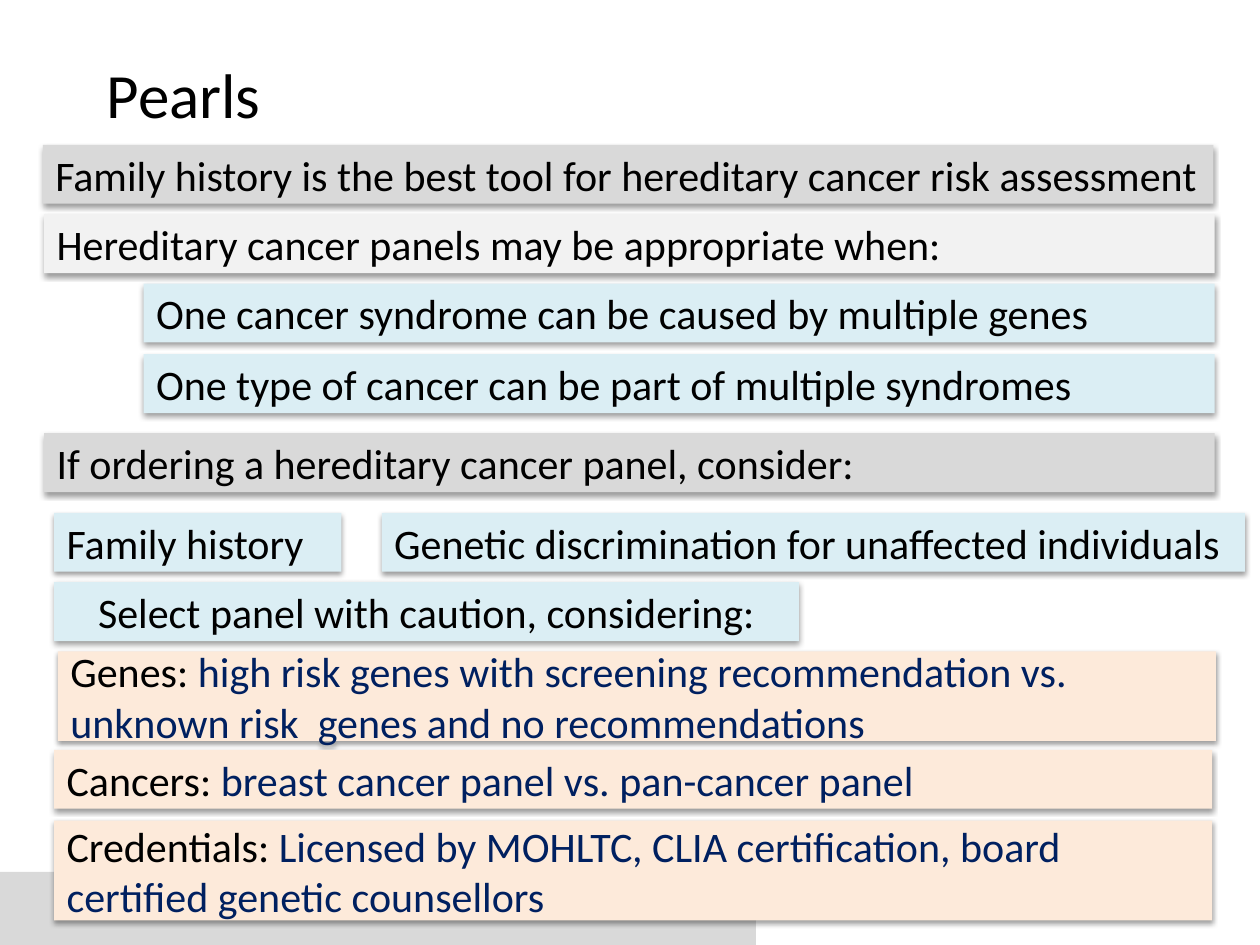
from lxml.etree import SubElement
from pptx import Presentation
from pptx.dml.color import RGBColor
from pptx.enum.shapes import MSO_SHAPE
from pptx.enum.text import MSO_ANCHOR, MSO_AUTO_SIZE, PP_ALIGN
from pptx.oxml.ns import qn
from pptx.util import Inches, Pt

WIDTH, HEIGHT = 10, 7.5
COL, ROW = WIDTH / 100, 0.55
FIRST_ROW = 1.15
COLORS = {
    "gray": "D9D9D9",
    "light": "F2F2F2",
    "blue": "DBEEF4",
    "peach": "FDEADA",
    "black": "000000",
    "navy": "002060",
}
BODY = {"name": "Calibri", "size": Pt(24)}
TITLE = {"name": "Calibri", "size": Pt(36)}
SHADOW = {"blurRad": Pt(3.15), "dist": Pt(1.57), "dir": 90 * 60000, "rotWithShape": 0}
SINGLE, DOUBLE, TALL = 0.85, 1.29, 1.44

BARS = [
    (3.4, 0, 92.9, SINGLE, "gray", "Family history is the best tool for hereditary cancer risk assessment", ""),
    (3.5, 1, 92.9, SINGLE, "light", "Hereditary cancer panels may be appropriate when:", ""),
    (11.4, 2, 85, SINGLE, "blue", "One cancer syndrome can be caused by multiple genes", ""),
    (11.4, 3.02, 85, SINGLE, "blue", "One type of cancer can be part of multiple syndromes", ""),
    (3.5, 4.16, 92.9, SINGLE, "gray", "If ordering a hereditary cancer panel, consider:", ""),
    (4.3, 5.31, 22.8, SINGLE, "blue", "Family history", ""),
    (30.3, 5.31, 68.5, SINGLE, "blue", "Genetic discrimination for unaffected individuals", ""),
    (4.6, 7.31, 91.9, DOUBLE, "peach", "Genes: ",
     "high risk genes with screening recommendation vs. unknown risk  genes and no recommendations"),
    (4.3, 8.73, 91.9, SINGLE, "peach", "Cancers: ", "breast cancer panel vs. pan-cancer panel"),
    (4.3, 9.75, 91.9, TALL, "peach", "Credentials: ",
     "Licensed by MOHLTC, CLIA certification, board certified genetic counsellors"),
]


def rgb(name):
    return RGBColor.from_string(COLORS[name])


def add_run(p, text, color, fmt):
    r = p.add_run()
    r.text = text
    for key, value in fmt.items():
        setattr(r.font, key, value)
    r.font.color.rgb = rgb(color)


def add_rect(s, left, top, width, height, color):
    sp = s.shapes.add_shape(MSO_SHAPE.RECTANGLE, *map(Inches, (left, top, width, height)))
    sp.shadow.inherit = False
    sp.fill.solid()
    sp.fill.fore_color.rgb = rgb(color)
    sp.line.fill.background()
    return sp


def add_shadow(sp):
    effects = sp._element.spPr.find(qn("a:effectLst"))
    outer = SubElement(effects, qn("a:outerShdw"), {k: str(v) for k, v in SHADOW.items()})
    clr = SubElement(outer, qn("a:srgbClr"), val=COLORS["black"])
    SubElement(clr, qn("a:alpha"), val="38000")


def add_bar(s, col, row, cols, rows, color, lead, detail, align=PP_ALIGN.LEFT):
    sp = add_rect(s, col * COL, FIRST_ROW + row * ROW, cols * COL, rows * ROW, color)
    add_shadow(sp)
    tf = sp.text_frame
    tf.word_wrap = True
    tf.vertical_anchor = MSO_ANCHOR.MIDDLE
    p = tf.paragraphs[0]
    p.alignment = align
    add_run(p, lead, "black", BODY)
    if detail:
        add_run(p, detail, "navy", BODY)


def add_title(s, text):
    box = (7.5 * COL, 0.39, 15.7 * COL, 0.71)
    tf = s.shapes.add_textbox(*map(Inches, box)).text_frame
    tf.word_wrap = True
    tf.auto_size = MSO_AUTO_SIZE.SHAPE_TO_FIT_TEXT
    add_run(tf.paragraphs[0], text, "black", TITLE)


def main():
    prs = Presentation()
    prs.slide_width, prs.slide_height = Inches(WIDTH), Inches(HEIGHT)
    s = prs.slides.add_slide(prs.slide_layouts[6])
    add_rect(s, 0, 6.92, WIDTH * 0.6, 0.58, "gray")
    add_title(s, "Pearls")
    for bar in BARS:
        add_bar(s, *bar)
    add_bar(s, 4.3, 6.31, 59.1, SINGLE, "blue",
            "Select panel with caution, considering:", "", PP_ALIGN.CENTER)
    prs.save("out.pptx")


if __name__ == "__main__":
    main()
